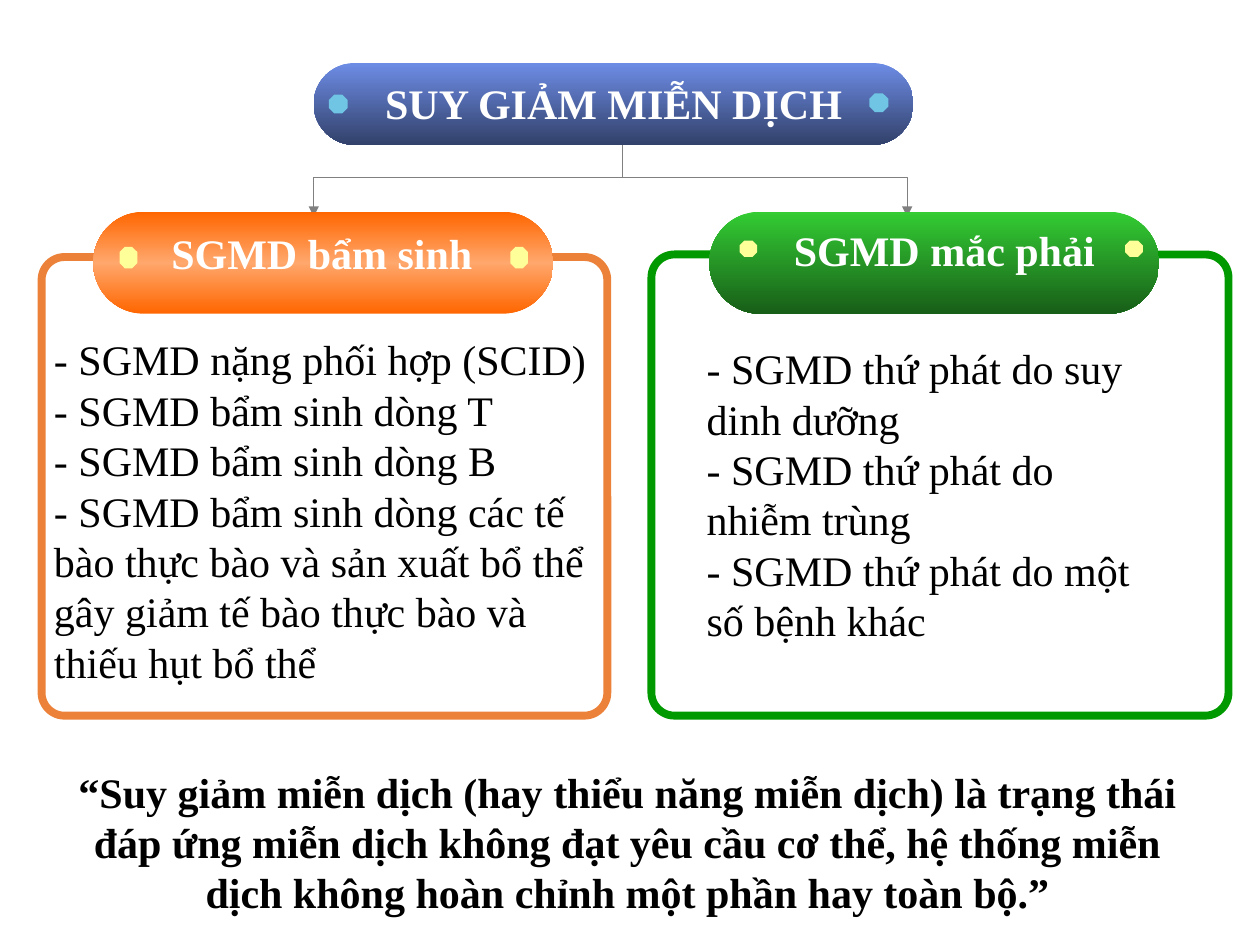
import copy
import pptx
import pptx.util
import pptx.dml.color
import pptx.enum.shapes
import pptx.enum.text
import pptx.oxml

RGBColor = pptx.dml.color.RGBColor
SHAPE = pptx.enum.shapes.MSO_SHAPE
ALIGN = pptx.enum.text.PP_ALIGN
ANCHOR = pptx.enum.text.MSO_ANCHOR
BLACK = RGBColor(0x00, 0x00, 0x00)
WHITE = RGBColor(0xFF, 0xFF, 0xFF)
GRAY = RGBColor(0x80, 0x80, 0x80)
BLUE = RGBColor(0x6D, 0x8C, 0xE5)
NAVY = RGBColor(0x32, 0x41, 0x6A)
SKY = RGBColor(0x6F, 0xC5, 0xE3)
ORANGE = RGBColor(0xFF, 0x66, 0x00)
PEACH = RGBColor(0xFF, 0xA7, 0x6C)
RUST = RGBColor(0xEC, 0x82, 0x3A)
LIME = RGBColor(0x33, 0xCC, 0x33)
FOREST = RGBColor(0x18, 0x5E, 0x18)
GREEN = RGBColor(0x00, 0x99, 0x00)
YELLOW = RGBColor(0xFF, 0xFF, 0x99)

deck = pptx.Presentation()
deck.slide_width = pptx.util.Inches(10)
deck.slide_height = pptx.util.Inches(7.5)
page = deck.slides.add_slide(deck.slide_layouts[6])

# Grid of 100 columns and 75 rows; every place is (left, top, width, height) in it
COLUMN = deck.slide_width // 100
ROW = deck.slide_height // 75


def write(text, place, bold=False, color=BLACK, align=ALIGN.LEFT,
          anchor=ANCHOR.TOP, wrap=True):
    left, top, width, height = place
    box = page.shapes.add_textbox(int(left * COLUMN), int(top * ROW),
                                  int(width * COLUMN), int(height * ROW))
    frame = box.text_frame
    frame.word_wrap = wrap
    frame.vertical_anchor = anchor
    frame.text = text
    for para in frame.paragraphs:
        para.alignment = align
        for span in para.runs:
            span.font.name = "Times New Roman"
            span.font.size = pptx.util.Pt(24)
            span.font.bold = bold
            span.font.color.rgb = color


def draw(kind, place, fills=(), outline=None, rounding=None):
    left, top, width, height = place
    shape = page.shapes.add_shape(kind, int(left * COLUMN), int(top * ROW),
                                  int(width * COLUMN), int(height * ROW))
    shape.shadow.inherit = False
    if rounding is not None:
        shape.adjustments[0] = rounding
    if outline is None:
        shape.line.fill.background()
    else:
        shape.line.color.rgb = outline
        shape.line.width = pptx.util.Pt(4.5)
    if not fills:
        shape.fill.background()
    elif len(fills) == 1:
        shape.fill.solid()
        shape.fill.fore_color.rgb = fills[0]
    else:
        shape.fill.gradient()
        shape.fill.gradient_angle = 270
        stops = shape._element.xpath(".//a:gsLst")[0]
        for _ in fills[2:]:
            stops.append(copy.deepcopy(stops[0]))
        for index, (stop, color) in enumerate(zip(shape.fill.gradient_stops, fills)):
            stop.position = index / (len(fills) - 1)
            stop.color.rgb = color


# Closing definition
write("“Suy giảm miễn dịch (hay thiểu năng miễn dịch) là trạng thái đáp ứng miễn dịch "
      "không đạt yêu cầu cơ thể, hệ thống miễn dịch không hoàn chỉnh một phần hay toàn bộ.”",
      (4.8, 61.3, 90, 12), bold=True, align=ALIGN.CENTER, anchor=ANCHOR.BOTTOM)

# Elbow arrows: laid out sideways, then turned so that they leave downwards
STEM, FORK_TOP, FORK_BOTTOM = 49.4, 11, 17.2
for target, turn in ((24.9, 90), (72, 270)):
    middle_x, middle_y = (STEM + target) / 2, (FORK_TOP + FORK_BOTTOM) / 2
    half_span = abs(target - STEM) / 2
    half_drop = (FORK_BOTTOM - FORK_TOP) / 2 * (1 if turn == 90 else -1)
    arrow = page.shapes.add_connector(
        pptx.enum.shapes.MSO_CONNECTOR.ELBOW,
        int((middle_x - half_drop) * COLUMN), int((middle_y - half_span) * ROW),
        int((middle_x + half_drop) * COLUMN), int((middle_y + half_span) * ROW))
    arrow.line.color.rgb = GRAY
    arrow.line.width = pptx.util.Pt(0.75)
    properties = arrow._element.spPr
    properties.xfrm.set("rot", str(turn * 60000))
    head = pptx.oxml.parse_xml(
        '<a:tailEnd xmlns:a="http://schemas.openxmlformats.org/drawingml/2006/main" type="triangle"/>')
    properties.find(pptx.oxml.ns.qn("a:ln")).append(head)
    properties.append(properties.makeelement(pptx.oxml.ns.qn("a:effectLst"), {}))

# Frames, each with a pill, two dots and a label; the top pill has no frame
branches = (
    ((3.3, 20.4, 44.9, 36.4), RUST, (7.4, 16.8, 36.5, 8.1), (ORANGE, PEACH, ORANGE),
     ((9.5, 19.6), (40.5, 19.6)), (1.4, 1.7), YELLOW,
     "SGMD bẩm sinh", (12.5, 17.6, 26.1, 6.3)),
    ((51.7, 20.2, 45.8, 36.6), GREEN, (56.3, 16.8, 35.7, 8.1), (LIME, FOREST),
     ((58.7, 19.1), (89.3, 19.1)), (1.4, 1.3), YELLOW,
     "SGMD mắc phải", (61.9, 17.3, 26.1, 6.3)),
    (None, None, (24.9, 5, 47.6, 6.5), (BLUE, NAVY),
     ((26.1, 7.5), (69, 7.4)), (1.5, 1.5), SKY,
     "SUY GIẢM MIỄN DỊCH", (29.3, 5.7, 38.8, 5)),
)
for frame, outline, pill, fills, dots, dot_size, dot_color, label, label_place in branches:
    if frame:
        draw(SHAPE.ROUNDED_RECTANGLE, frame, outline=outline, rounding=0.05)
    draw(SHAPE.ROUNDED_RECTANGLE, pill, fills=fills, rounding=0.5)
    for dot in dots:
        draw(SHAPE.OCTAGON, dot + dot_size, fills=(dot_color,))
    write(label, label_place, bold=True, color=WHITE, align=ALIGN.CENTER, wrap=frame is None)

# Lists inside the frames
write("- SGMD nặng phối hợp (SCID)\n"
      "- SGMD bẩm sinh dòng T\n"
      "- SGMD bẩm sinh dòng B\n"
      "- SGMD bẩm sinh dòng các tế bào thực bào và sản xuất bổ thể "
      "gây giảm tế bào thực bào và thiếu hụt bổ thể", (3.3, 26, 44.9, 31.8))
write("- SGMD thứ phát do suy dinh dưỡng\n"
      "- SGMD thứ phát do nhiễm trùng\n"
      "- SGMD thứ phát do một số bệnh khác", (55.1, 26.7, 38.2, 25.2))

deck.save("out.pptx")
